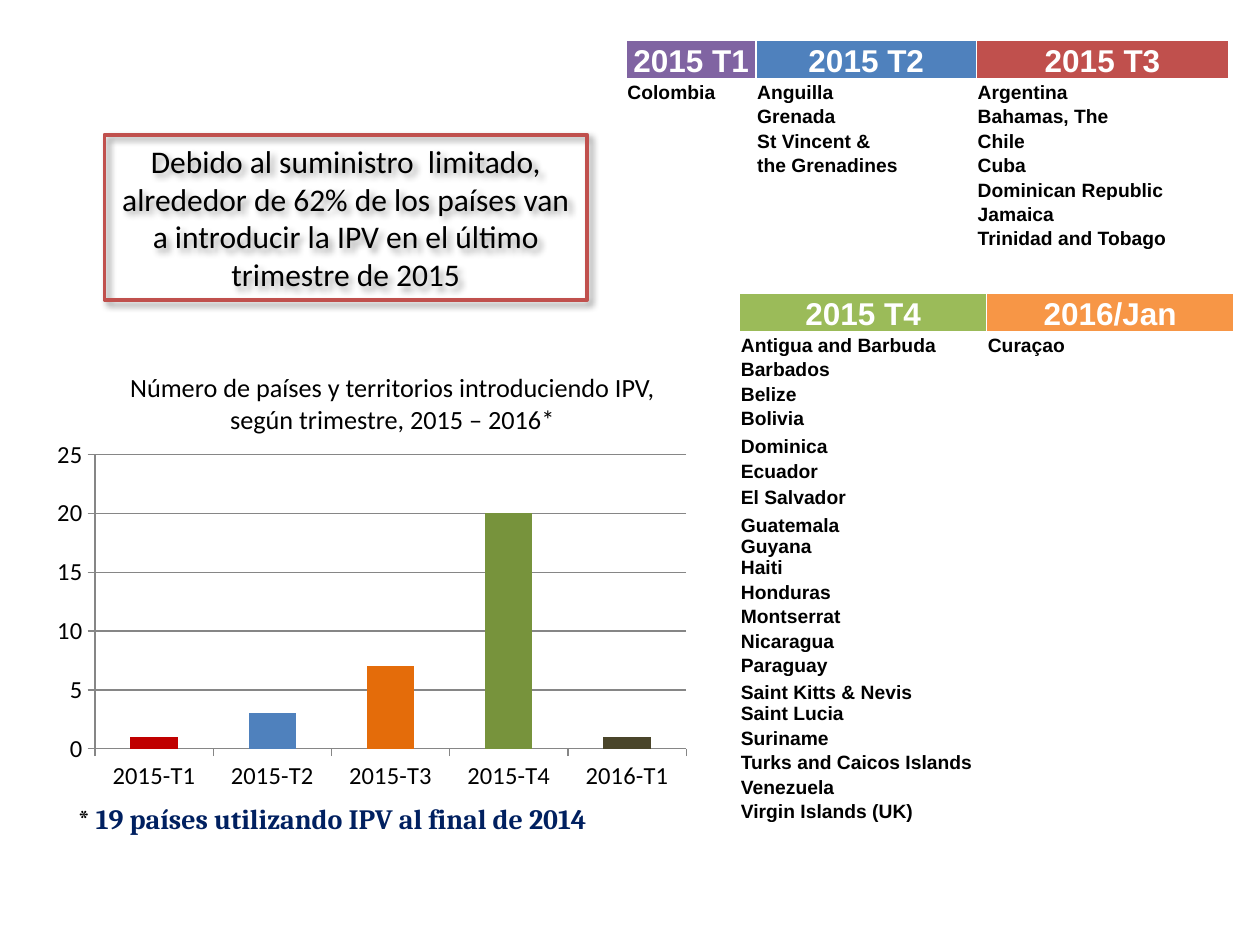
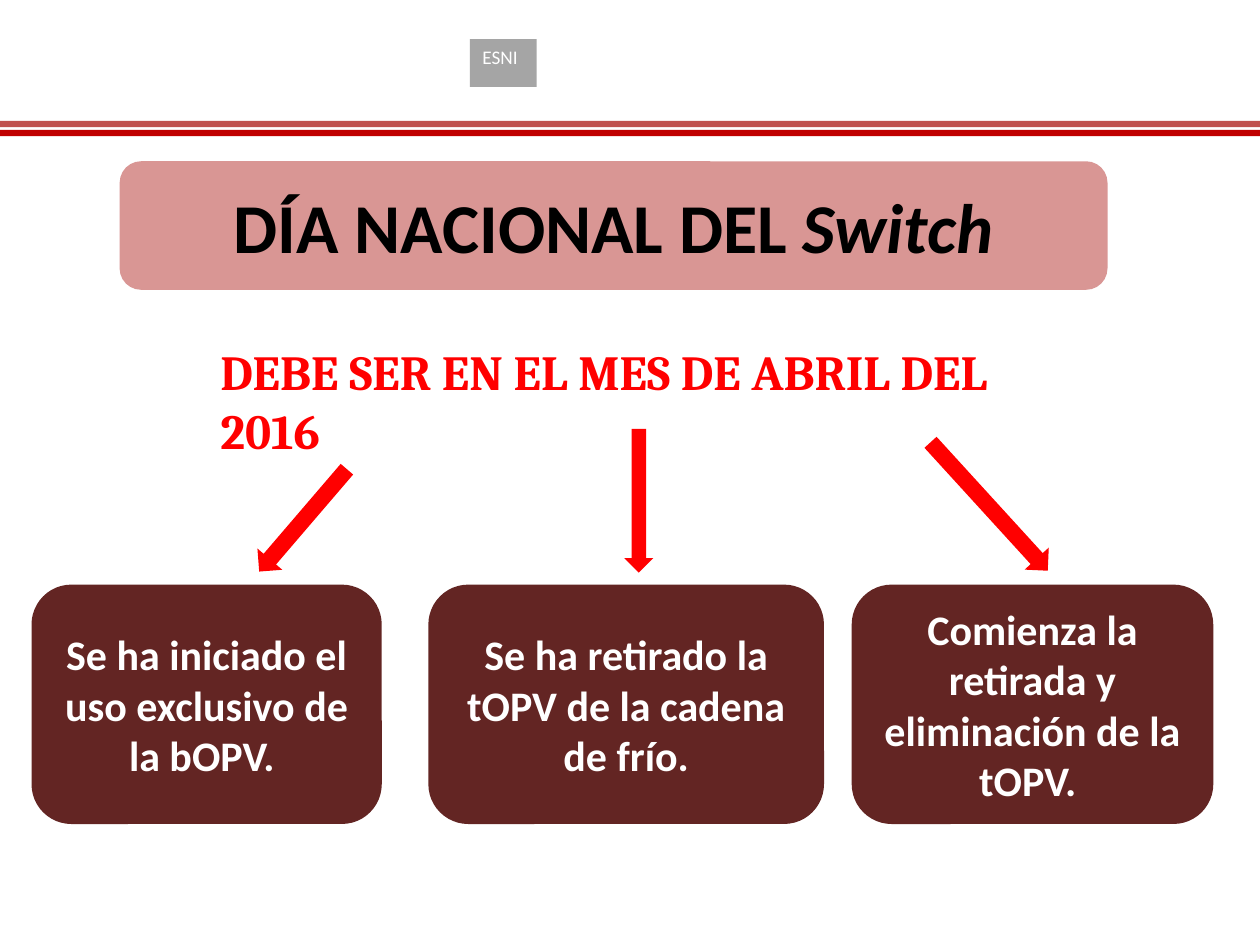
"""Builds two slides on the IPV rollout calendar and the national switch day."""
import lxml.etree
import pptx
import pptx.chart.data
import pptx.dml.color
import pptx.enum.chart
import pptx.enum.shapes
import pptx.enum.text
import pptx.oxml.ns
import pptx.util

Inches = pptx.util.Inches
Pt = pptx.util.Pt
RGB = pptx.dml.color.RGBColor
SHAPE = pptx.enum.shapes.MSO_SHAPE
ALIGN = pptx.enum.text.PP_ALIGN
ANCHOR = pptx.enum.text.MSO_ANCHOR
qn = pptx.oxml.ns.qn

WHITE = RGB(0xFF, 0xFF, 0xFF)
BLACK = RGB(0, 0, 0)
BRICK = RGB(0xC0, 0x50, 0x4D)
BLUE = RGB(0x4F, 0x81, 0xBD)
PURPLE = RGB(0x80, 0x64, 0xA2)
GREEN = RGB(0x9B, 0xBB, 0x59)
ORANGE = RGB(0xF7, 0x96, 0x46)
CRIMSON = RGB(0xC0, 0, 0)
AMBER = RGB(0xE4, 0x6C, 0x0A)
OLIVE = RGB(0x77, 0x93, 0x3C)
UMBER = RGB(0x4A, 0x45, 0x2A)
NAVY = RGB(0, 0x20, 0x60)
GRAY = RGB(0xA5, 0xA5, 0xA5)
GRID = RGB(0x86, 0x86, 0x86)
PINK = RGB(0xD9, 0x96, 0x94)
MAROON = RGB(0x63, 0x25, 0x23)
RED = RGB(0xFF, 0, 0)

LATE = {
    "at": (5.87, 2.33), "heads": [("2015 T4", GREEN, 1.96), ("2016/Jan", ORANGE, 1.96)],
    "lists": [
        ["Antigua and Barbuda", "Barbados", "Belize", "Bolivia", "Dominica", "Ecuador",
         "El Salvador", "Guatemala\nGuyana\nHaiti", "Honduras", "Montserrat", "Nicaragua",
         "Paraguay", "Saint Kitts & Nevis\nSaint Lucia", "Suriname",
         "Turks and Caicos Islands", "Venezuela", "Virgin Islands (UK)"],
        ["Curaçao"]],
    "tall": {5: 0.22, 7: 0.21, 8: 0.56, 13: 0.38},
}
EARLY = {
    "at": (4.97, 0.32),
    "heads": [("2015 T1", PURPLE, 1.03), ("2015 T2", BLUE, 1.75), ("2015 T3", BRICK, 2)],
    "lists": [
        ["Colombia"],
        ["Anguilla", "Grenada", "St Vincent &", "the Grenadines"],
        ["Argentina", "Bahamas, The", "Chile", "Cuba", "Dominican Republic", "Jamaica",
         "Trinidad and Tobago"]],
    "tall": {},
}
CALLOUT = ("Debido al suministro  limitado, alrededor de 62% de los países van "
           "a introducir la IPV en el último trimestre de 2015")
CAPTION = "Número de países y territorios introduciendo IPV, según trimestre, 2015 – 2016*"
NOTE = ("* ", "19 países utilizando IPV al final de 2014")
BARS = [("2015-T1", 1, CRIMSON), ("2015-T2", 3, BLUE), ("2015-T3", 7, AMBER),
        ("2015-T4", 20, OLIVE), ("2016-T1", 1, UMBER)]

TITLE = ("DÍA NACIONAL DEL ", "Switch")
MONTH = "DEBE SER EN EL MES DE ABRIL DEL 2016"
STRIPES = [(0.96, BRICK), (1.03, CRIMSON)]
STEPS = [(0.25, 2.78, "Se ha iniciado el uso exclusivo de la bOPV. "),
         (3.4, 3.14, "Se ha retirado la tOPV de la cadena de frío."),
         (6.76, 2.87, "Comienza la retirada y eliminación de la tOPV. ")]
ARROWS = [((7.16, 3.89, 1.38, 0.26), 47.6), ((4.5, 3.86, 1.14, 0.23), 90),
          ((1.87, 4, 1.07, 0.26), 130.6)]


def style(font, size, color, face="Calibri", bold=False):
    font.size, font.name, font.bold = Pt(size), face, bold
    font.color.rgb = color


def write(frame, parts, size, color, face="Calibri", bold=False, align=ALIGN.CENTER):
    frame.word_wrap = True
    para = frame.paragraphs[0]
    para.alignment = align
    style(para.font, size, color, face, bold)
    for part in parts:
        para.add_run().text = part
    return para


def block(slide, kind, box, fill=None):
    shape = slide.shapes.add_shape(kind, *map(Inches, box))
    shape.shadow.inherit = False
    shape.line.fill.background()
    if fill is None:
        shape.fill.background()
    else:
        shape.fill.solid()
        shape.fill.fore_color.rgb = fill
    return shape


def label(slide, box, *args, **kwargs):
    return write(slide.shapes.add_textbox(*map(Inches, box)).text_frame, *args, **kwargs)


def add(parent, tag, **attrs):
    return lxml.etree.SubElement(parent, qn(tag), **attrs)


def edge(cell):
    props = cell._tc.get_or_add_tcPr()
    for side in "LRTB":
        line = add(props, "a:ln" + side, w="12700")
        add(add(line, "a:solidFill"), "a:srgbClr", val=str(WHITE))


def fill_cell(cell, text, size, color, back, align):
    edge(cell)
    cell.fill.solid()
    cell.fill.fore_color.rgb = back
    cell.vertical_anchor = ANCHOR.BOTTOM
    cell.margin_left = cell.margin_right = cell.margin_top = Inches(0.01)
    cell.margin_bottom = 0
    cell.text = text.replace("\n", "\n")
    for para in cell.text_frame.paragraphs:
        para.alignment = align
        style(para.font, size, color, "Arial", True)
        if not text:
            add(para._p, "a:endParaRPr", sz=str(size * 100))


def roster(slide, data):
    heads, lists = data["heads"], data["lists"]
    count = max(map(len, lists)) + 1
    wide = sum(head[2] for head in heads)
    table = slide.shapes.add_table(
        count, len(heads), *map(Inches, (*data["at"], wide, 1))).table
    table.first_row = table.horz_banding = False
    for row in range(count):
        tall = data["tall"].get(row)
        table.rows[row].height = Inches(tall) if tall else Pt(14 if row else 22)
    for col, ((head, back, width), names) in enumerate(zip(heads, lists)):
        table.columns[col].width = Inches(width)
        fill_cell(table.cell(0, col), head, 18, WHITE, back, ALIGN.CENTER)
        for row in range(1, count):
            text = names[row - 1] if row <= len(names) else ""
            fill_cell(table.cell(row, col), text, 11, BLACK, WHITE, ALIGN.LEFT)


def bar_chart(slide):
    data = pptx.chart.data.CategoryChartData()
    data.categories = [bar[0] for bar in BARS]
    data.add_series("Series 1", [bar[1] for bar in BARS])
    chart = slide.shapes.add_chart(
        pptx.enum.chart.XL_CHART_TYPE.COLUMN_CLUSTERED,
        *map(Inches, (0.35, 3.43, 5.2, 2.91)), data).chart
    chart.has_title = chart.has_legend = False
    style(chart.font, 14, BLACK)
    plot = chart.plots[0]
    plot.gap_width, plot.vary_by_categories = 150, False
    for index, bar in enumerate(BARS):
        fill = plot.series[0].points[index].format.fill
        fill.solid()
        fill.fore_color.rgb = bar[2]
    axis = chart.value_axis
    axis.minimum_scale, axis.maximum_scale, axis.major_unit = 0, 25, 5
    axis.has_major_gridlines = True
    for part in (axis, chart.category_axis, axis.major_gridlines):
        part.format.line.color.rgb = GRID
        part.format.line.width = Pt(0.75)
    for part in (axis, chart.category_axis):
        part.major_tick_mark = pptx.enum.chart.XL_TICK_MARK.OUTSIDE


def rollout(slide):
    roster(slide, LATE)
    roster(slide, EARLY)
    frame = block(slide, SHAPE.RECTANGLE, (0.83, 1.07, 3.83, 1.31))
    frame.line.color.rgb = BRICK
    frame.line.width = Pt(2.25)
    glow = add(frame._element.spPr.find(qn("a:effectLst")), "a:outerShdw",
               blurRad="50800", dist="38100", dir="2700000", algn="tl", rotWithShape="0")
    add(add(glow, "a:srgbClr", val=str(BLACK)), "a:alpha", val="40000")
    write(frame.text_frame, [CALLOUT], 18, BLACK)
    bar_chart(slide)
    label(slide, (0.83, 2.9, 4.57, 0.61), [CAPTION], 15, BLACK)
    note = label(slide, (0.52, 6.31, 4.64, 0.37), NOTE, 16, BLACK, "Cambria",
                 align=ALIGN.LEFT)
    note.runs[1].font.bold = True
    note.runs[1].font.color.rgb = NAVY


def switch_day(slide):
    tag = block(slide, SHAPE.RECTANGLE, (3.73, 0.31, 0.53, 0.38), GRAY)
    tag.text_frame.vertical_anchor = ANCHOR.TOP
    write(tag.text_frame, ["ESNI"], 11, WHITE, align=ALIGN.LEFT).space_after = Pt(10)
    for top, color in STRIPES:
        block(slide, SHAPE.RECTANGLE, (0, top, 10, 0.05), color)
    banner = block(slide, SHAPE.ROUNDED_RECTANGLE, (0.95, 1.28, 7.84, 1.02), PINK)
    title = write(banner.text_frame, TITLE, 40, BLACK, bold=True)
    title.runs[1].font.italic = True
    for left, width, text in STEPS:
        step = block(slide, SHAPE.ROUNDED_RECTANGLE, (left, 4.64, width, 1.9), MAROON)
        write(step.text_frame, [text], 24, WHITE, bold=True)
    label(slide, (1.65, 2.66, 7.15, 0.57), [MONTH], 28, RED, "Cambria", True, ALIGN.LEFT)
    for box, turn in ARROWS:
        block(slide, SHAPE.RIGHT_ARROW, box, RED).rotation = turn


def main():
    deck = pptx.Presentation()
    deck.slide_width, deck.slide_height = Inches(10), Inches(7.5)
    for draw in (rollout, switch_day):
        draw(deck.slides.add_slide(deck.slide_layouts[6]))
    deck.save("out.pptx")


if __name__ == "__main__":
    main()
